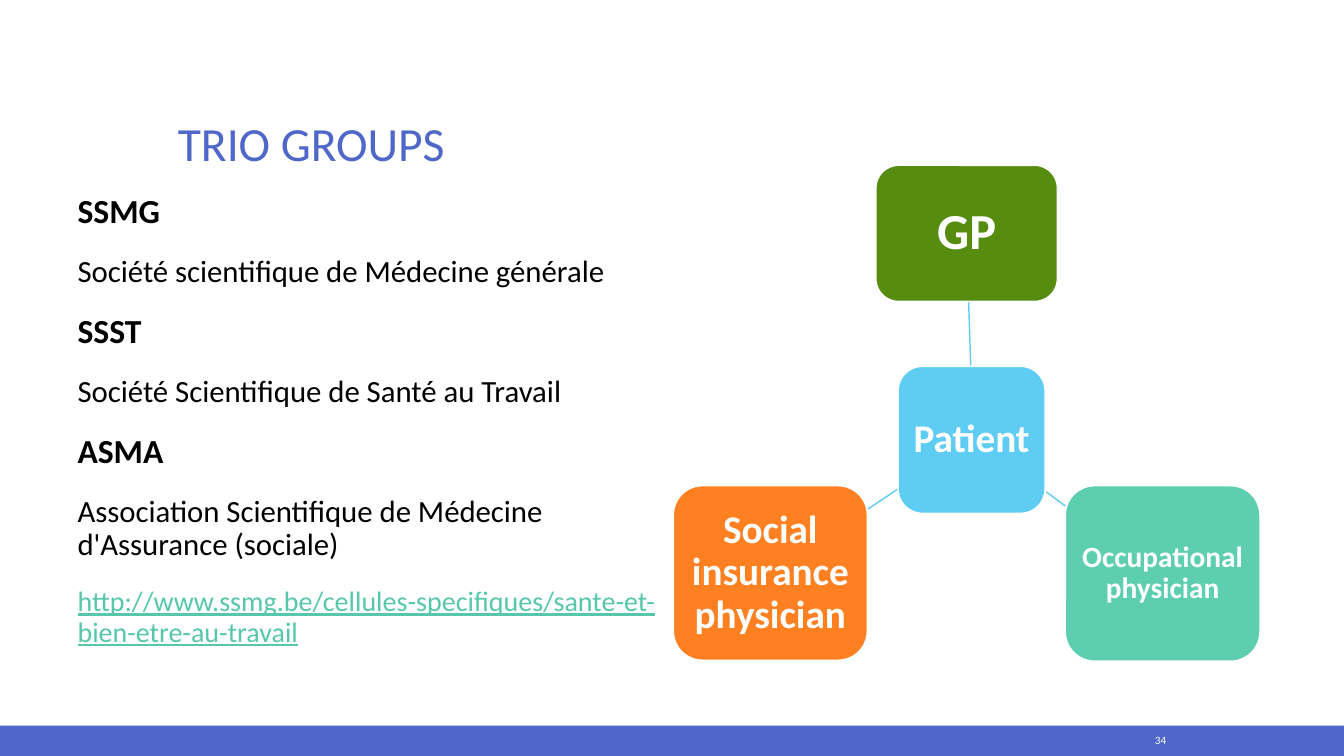
from pptx import Presentation
from pptx.dml.color import RGBColor
from pptx.enum.shapes import MSO_CONNECTOR, MSO_SHAPE
from pptx.enum.text import MSO_ANCHOR, PP_ALIGN
from pptx.oxml.ns import qn
from pptx.util import Pt
from lxml.etree import SubElement

INDIGO = RGBColor(0x4E, 0x67, 0xC8)
SKY = RGBColor(0x5E, 0xCC, 0xF3)
GREEN = RGBColor(0x56, 0x8D, 0x11)
MINT = RGBColor(0x5D, 0xCE, 0xAF)
ORANGE = RGBColor(0xFF, 0x80, 0x21)
LINK_GREEN = RGBColor(0x56, 0xC7, 0xAA)
BLACK = RGBColor(0, 0, 0)
WHITE = RGBColor(0xFF, 0xFF, 0xFF)

SOCIETIES = [
    ("SSMG", "Société scientifique de Médecine générale"),
    ("SSST", "Société Scientifique de Santé au Travail"),
    ("ASMA", "Association Scientifique de Médecine d'Assurance (sociale)"),
]
WEB_ADDRESS = "http://www.ssmg.be/cellules-specifiques/sante-et-bien-etre-au-travail"

ROLES = [
    ("Patient", (641.5, 261.7, 105, 105), SKY, 28, 5.8),
    ("GP", (625.7, 118.1, 129.6, 97.2), GREEN, 36, 7.2),
    ("Occupational physician", (761, 347, 139, 125.3), MINT, 21, 4.3),
    ("Social insurance physician", (481, 347, 138.5, 124.6), ORANGE, 28, 5.8),
]
SPOKES = [
    (693.4, 261.4, 691.9, 215.3),
    (747.4, 351.4, 761, 361.4),
    (641.5, 349.2, 619.9, 363.6),
]


def set_attributes(target, values):
    for name, value in values.items():
        setattr(target, name, value)


def write_paragraph(paragraph, text, font, layout):
    set_attributes(paragraph, layout)
    run = paragraph.add_run()
    run.text = text
    values = dict(font)
    run.font.color.rgb = values.pop("color")
    set_attributes(run.font, {"name": "Calibri", **values})


def add_text(slide, bounds, anchor, paragraphs, layout):
    box = slide.shapes.add_textbox(*map(Pt, bounds))
    frame = box.text_frame
    set_attributes(frame, {"word_wrap": True, "vertical_anchor": anchor})
    for index, (text, font) in enumerate(paragraphs):
        paragraph = frame.add_paragraph() if index else frame.paragraphs[0]
        write_paragraph(paragraph, text, font, layout)
    return box


def add_block(slide, kind, bounds, color):
    shape = slide.shapes.add_shape(kind, *map(Pt, bounds))
    shape.shadow.inherit = False
    shape.fill.solid()
    shape.fill.fore_color.rgb = color
    shape.line.fill.background()
    return shape


def add_role(slide, label, bounds, color, size, inset):
    shape = add_block(slide, MSO_SHAPE.ROUNDED_RECTANGLE, bounds, color)
    shape.line.color.rgb = WHITE
    shape.line.width = Pt(1)
    frame = shape.text_frame
    margins = ("margin_left", "margin_top", "margin_right", "margin_bottom")
    set_attributes(frame, dict.fromkeys(margins, Pt(inset)))
    set_attributes(frame, {"word_wrap": True, "vertical_anchor": MSO_ANCHOR.MIDDLE})
    write_paragraph(
        frame.paragraphs[0],
        label,
        {"size": Pt(size), "bold": True, "color": WHITE},
        {"alignment": PP_ALIGN.CENTER, "line_spacing": 0.9},
    )


def add_spoke(slide, ends):
    spoke = slide.shapes.add_connector(MSO_CONNECTOR.STRAIGHT, *map(Pt, ends))
    spoke.line.color.rgb = SKY
    spoke.line.width = Pt(1)
    SubElement(spoke._element.spPr, qn("a:effectLst"))


def add_societies(slide):
    paragraphs = []
    for acronym, full_name in SOCIETIES:
        paragraphs.append((acronym, {"size": Pt(24), "bold": True, "color": BLACK}))
        paragraphs.append((full_name, {"size": Pt(22), "color": BLACK}))
    paragraphs.append(
        (WEB_ADDRESS, {"size": Pt(20), "underline": True, "color": LINK_GREEN})
    )
    box = add_text(
        slide, (44.6, 135.4, 433, 351.4), MSO_ANCHOR.TOP, paragraphs,
        {"line_spacing": 0.9, "space_before": Pt(18)},
    )
    box.text_frame.margin_left = Pt(10.8)


def main():
    presentation = Presentation()
    set_attributes(presentation, {"slide_width": Pt(960), "slide_height": Pt(540)})
    slide = presentation.slides.add_slide(presentation.slide_layouts[6])
    add_block(slide, MSO_SHAPE.RECTANGLE, (0, 518.4, 960, 21.6), INDIGO)
    add_text(
        slide, (120, 36, 720, 90), MSO_ANCHOR.BOTTOM,
        [("TRIO GROUPS", {"size": Pt(34), "color": INDIGO})],
        {"line_spacing": 0.9},
    )
    add_societies(slide)
    add_text(
        slide, (779, 519.8, 61.2, 18), MSO_ANCHOR.MIDDLE,
        [("34", {"size": Pt(8), "color": WHITE})],
        {"alignment": PP_ALIGN.RIGHT},
    )
    for ends in SPOKES:
        add_spoke(slide, ends)
    for role in ROLES:
        add_role(slide, *role)
    presentation.save("out.pptx")


if __name__ == "__main__":
    main()
